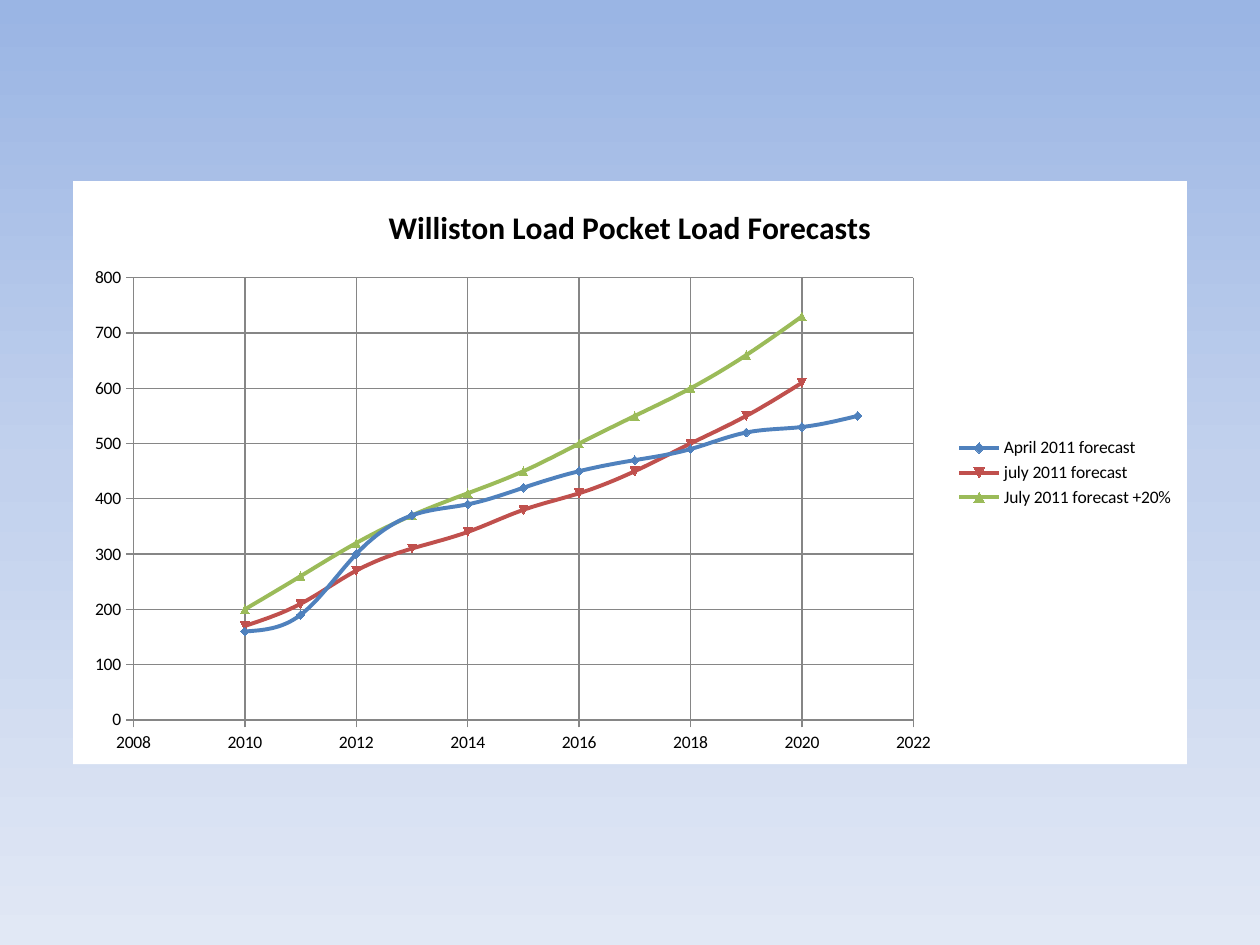
from copy import deepcopy

from lxml.etree import SubElement
from pptx import Presentation
from pptx.chart.data import XyChartData
from pptx.dml.color import RGBColor
from pptx.enum.chart import XL_CHART_TYPE, XL_LEGEND_POSITION, XL_TICK_MARK
from pptx.oxml import parse_xml
from pptx.oxml.ns import nsdecls, qn
from pptx.util import Pt

FIRST_YEAR = 2010
FORECASTS = [
    ("April 2011 forecast", "4F81BD",
     [160, 190, 300, 370, 390, 420, 450, 470, 490, 520, 530, 550]),
    ("july 2011 forecast ", "C0504D",
     [170, 210, 270, 310, 340, 380, 410, 450, 500, 550, 610]),
    ("July 2011 forecast +20%", "9BBB59",
     [200, 260, 320, 370, 410, 450, 500, 550, 600, 660, 730]),
]
CHART_WIDTH, CHART_HEIGHT = 636.5, 333.25


def rgb(color):
    return RGBColor.from_string(color)


class SlideBuilder:
    font = "Calibri"
    text_color = "000000"
    grid_color = "868686"

    def __init__(self, prs):
        self.s = prs.slides.add_slide(prs.slide_layouts[6])

    def background(self, stops):
        """Fill the slide from top to bottom with (percent, colour) stops."""
        fill = self.s.background.fill
        fill.gradient()
        fill.gradient_angle = 270
        gs_list = self.s.element.find(".//" + qn("a:gsLst"))
        while len(gs_list) < len(stops):
            gs_list.append(deepcopy(gs_list[0]))
        for gs, stop, (percent, color) in zip(gs_list, fill.gradient_stops, stops):
            gs.set("pos", str(percent * 1000))
            stop.color.rgb = rgb(color)

    def style_font(self, font, size, bold=False):
        font.name = self.font
        font.size = Pt(size)
        font.bold = bold
        font.color.rgb = rgb(self.text_color)

    def axis(self, axis, low, high, step):
        axis.minimum_scale, axis.maximum_scale = low, high
        axis.major_unit = step
        axis.major_tick_mark = XL_TICK_MARK.OUTSIDE
        axis.minor_tick_mark = XL_TICK_MARK.NONE
        axis.has_major_gridlines = True
        for line in (axis.format.line, axis.major_gridlines.format.line):
            line.color.rgb = rgb(self.grid_color)
            line.width = Pt(0.75)

    def plot_layout(self, chart, left, top, width, height):
        """Place the inner plot area, in points from the chart's corner."""
        area = chart.element.find(".//" + qn("c:plotArea"))
        old = area.find(qn("c:layout"))
        if old is not None:
            area.remove(old)
        layout = parse_xml(f"<c:layout {nsdecls('c')}><c:manualLayout/></c:layout>")
        settings = {"layoutTarget": "inner", "xMode": "edge", "yMode": "edge",
                    "x": left / CHART_WIDTH, "y": top / CHART_HEIGHT,
                    "w": width / CHART_WIDTH, "h": height / CHART_HEIGHT}
        for tag, val in settings.items():
            SubElement(layout[0], qn("c:" + tag)).set("val", str(val))
        area.insert(0, layout)

    def chart_fill(self, chart, color):
        chart.element.find(qn("c:chart")).addnext(parse_xml(
            f"<c:spPr {nsdecls('c', 'a')}><a:solidFill><a:srgbClr val='{color}'/>"
            "</a:solidFill><a:ln><a:noFill/></a:ln></c:spPr>"))

    def scatter(self, title, forecasts, left, top):
        data = XyChartData()
        for name, _, loads in forecasts:
            series = data.add_series(name)
            for year, load in enumerate(loads, FIRST_YEAR):
                series.add_data_point(year, load)
        chart = self.s.shapes.add_chart(
            XL_CHART_TYPE.XY_SCATTER_SMOOTH, Pt(left), Pt(top),
            Pt(CHART_WIDTH), Pt(CHART_HEIGHT), data).chart
        self.style_font(chart.font, 10)
        self.chart_fill(chart, "FFFFFF")

        chart.has_title = True
        r = chart.chart_title.text_frame.paragraphs[0].add_run()
        r.text = title
        self.style_font(r.font, 18, bold=True)

        chart.has_legend = True
        chart.legend.position = XL_LEGEND_POSITION.RIGHT
        chart.legend.include_in_layout = False

        plot = chart.plots[0]
        plot.vary_by_categories = False
        for series, (_, color, _) in zip(plot.series, forecasts):
            series.format.line.color.rgb = rgb(color)
            series.format.line.width = Pt(2.25)
        for smooth in chart.element.iter(qn("c:smooth")):
            smooth.set("val", "1")
        return chart


def main():
    prs = Presentation()
    prs.slide_width, prs.slide_height = Pt(720), Pt(540)
    slide = SlideBuilder(prs)
    slide.background([(0, "9AB5E4"), (50, "C2D1ED"), (100, "E1E8F5")])
    chart = slide.scatter("Williston Load Pocket Load Forecasts", FORECASTS,
                          41.75, 103.5)
    slide.axis(chart.category_axis, 2008, 2022, 2)
    slide.axis(chart.value_axis, 0, 800, 100)
    slide.plot_layout(chart, 34.5, 55.25, 445.75, 252.75)
    prs.save("out.pptx")


if __name__ == "__main__":
    main()
